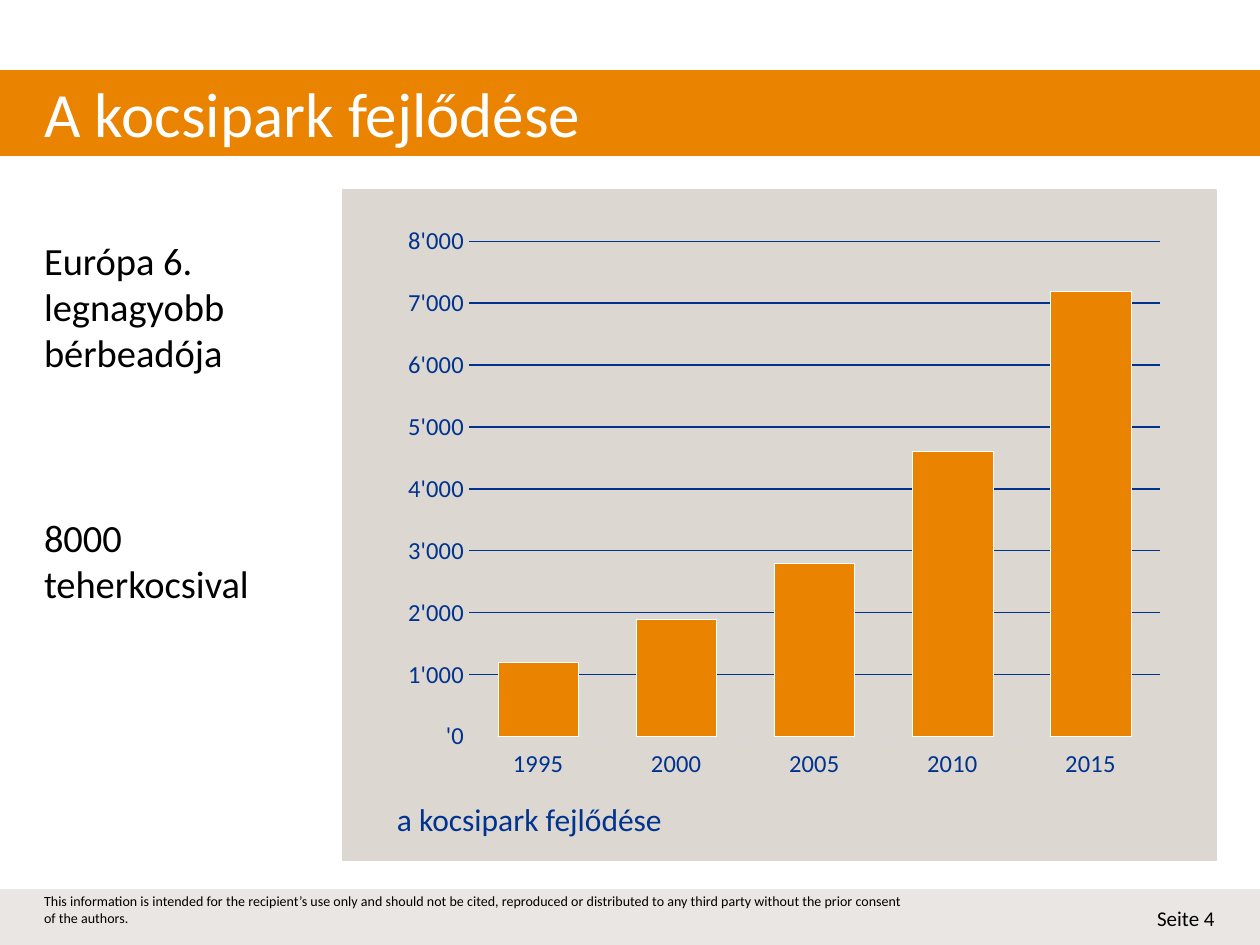
"""Build the wagon fleet growth slide with its column chart."""
from dataclasses import dataclass

from lxml import etree
from pptx import Presentation
from pptx import util as u
from pptx.chart import data as chart_data
from pptx.dml import color
from pptx.enum import chart as charts, shapes, text
from pptx.oxml import ns


@dataclass(frozen=True)
class Theme:
    font: str = "Calibri"
    orange: str = "E98300"
    blue: str = "00338D"
    panel: str = "DDD7D2"
    footer: str = "EAE6E3"
    axis: str = "D9D9D9"
    white: str = "FFFFFF"
    black: str = "000000"
    title_size: int = 36
    body_size: int = 22
    caption_size: int = 18
    axis_size: int = 14
    page_size: int = 12
    note_size: int = 8


theme = Theme()
rgb = color.RGBColor.from_string


def style_font(font, size, shade):
    font.name = theme.font
    font.size = u.Pt(size)
    font.color.rgb = rgb(shade)


def add_text(page, place, lines, size, shade, anchor=text.MSO_ANCHOR.MIDDLE):
    box = page.shapes.add_textbox(*map(u.Inches, place))
    frame = box.text_frame
    frame.word_wrap = True
    frame.vertical_anchor = anchor
    frame.margin_left = frame.margin_right = frame.margin_top = frame.margin_bottom = 0
    frame.text = "\n".join(lines)
    for para in frame.paragraphs:
        for span in para.runs:
            style_font(span.font, size, shade)
    return frame


deck = Presentation()
deck.slide_width, deck.slide_height = u.Inches(10), u.Inches(7.5)
page = deck.slides.add_slide(deck.slide_layouts[6])

bands = [
    ((0, 7.06, 10, 0.44), theme.footer),
    ((0, 0.56, 10, 0.67), theme.orange),
    ((2.72, 1.51, 6.93, 5.32), theme.panel),
]
for place, shade in bands:
    band = page.shapes.add_shape(shapes.MSO_SHAPE.RECTANGLE, *map(u.Inches, place))
    band.shadow.inherit = False
    band.fill.solid()
    band.fill.fore_color.rgb = rgb(shade)
    band.line.color.rgb = rgb(shade)
    band.line.width = u.Pt(1)

add_text(page, (0.35, 0.56, 9.29, 0.67), ["A kocsipark fejlődése"], theme.title_size, theme.white)

page_number = add_text(page, (7.44, 7.15, 2.2, 0.28), ["Seite 4"], theme.page_size, theme.black)
page_number.paragraphs[0].alignment = text.PP_ALIGN.RIGHT

disclaimer = (
    "This information is intended for the recipient’s use only and should not be cited, "
    "reproduced or distributed to any third party without the prior consent of the authors."
)
add_text(page, (0.35, 7.08, 6.93, 0.28), [disclaimer], theme.note_size, theme.black)

facts = add_text(
    page, (0.35, 1.88, 2.2, 4.95),
    ["Európa 6. legnagyobb bérbeadója", "8000 teherkocsival"],
    theme.body_size, theme.black, text.MSO_ANCHOR.TOP,
)
facts.paragraphs[1].space_before = u.Pt(79)

fleet = chart_data.CategoryChartData()
fleet.categories = ["1995", "2000", "2005", "2010", "2015"]
fleet.add_series("Series 1", [1200, 1900, 2800, 4600, 7200])
chart = page.shapes.add_chart(
    charts.XL_CHART_TYPE.COLUMN_CLUSTERED,
    *map(u.Inches, (3.03, 1.71, 6.3, 4.57)), fleet,
).chart
chart.has_legend = False
chart.has_title = False
style_font(chart.font, theme.axis_size, theme.blue)

plot = chart.plots[0]
plot.gap_width = 71
plot.overlap = -27
plot.vary_by_categories = False
columns = plot.series[0].format
columns.fill.solid()
columns.fill.fore_color.rgb = rgb(theme.orange)
columns.line.color.rgb = rgb(theme.white)
columns.line.width = u.Pt(0.25)

years = chart.category_axis
years.major_tick_mark = charts.XL_TICK_MARK.OUTSIDE
years.format.line.color.rgb = rgb(theme.axis)
years.format.line.width = u.Pt(0.75)

wagons = chart.value_axis
wagons.minimum_scale, wagons.maximum_scale, wagons.major_unit = 0, 8000, 1000
wagons.major_tick_mark = charts.XL_TICK_MARK.NONE
wagons.format.line.fill.background()
wagons.major_gridlines.format.line.color.rgb = rgb(theme.blue)
wagons.major_gridlines.format.line.width = u.Pt(0.75)
wagons.tick_labels.number_format = r"__#\'##0;\-#\'##0"
wagons.tick_labels.number_format_is_linked = False
for axis in (years, wagons):
    style_font(axis.tick_labels.font, theme.axis_size, theme.blue)

plot_area = chart.element.find(".//" + ns.qn("c:plotArea"))
for old_layout in plot_area.findall(ns.qn("c:layout")):
    plot_area.remove(old_layout)
layout = etree.Element(ns.qn("c:layout"))
plot_area.insert(0, layout)
manual = etree.SubElement(layout, ns.qn("c:manualLayout"))
settings = [
    ("layoutTarget", "inner"), ("xMode", "edge"), ("yMode", "edge"),
    ("x", "0.11"), ("y", "0.045"), ("w", "0.87"), ("h", "0.86"),
]
for name, value in settings:
    etree.SubElement(manual, ns.qn("c:" + name)).set("val", value)

add_text(
    page, (3.15, 6.35, 4.8, 0.31), ["a kocsipark fejlődése"],
    theme.caption_size, theme.blue, text.MSO_ANCHOR.TOP,
)

deck.save("out.pptx")
